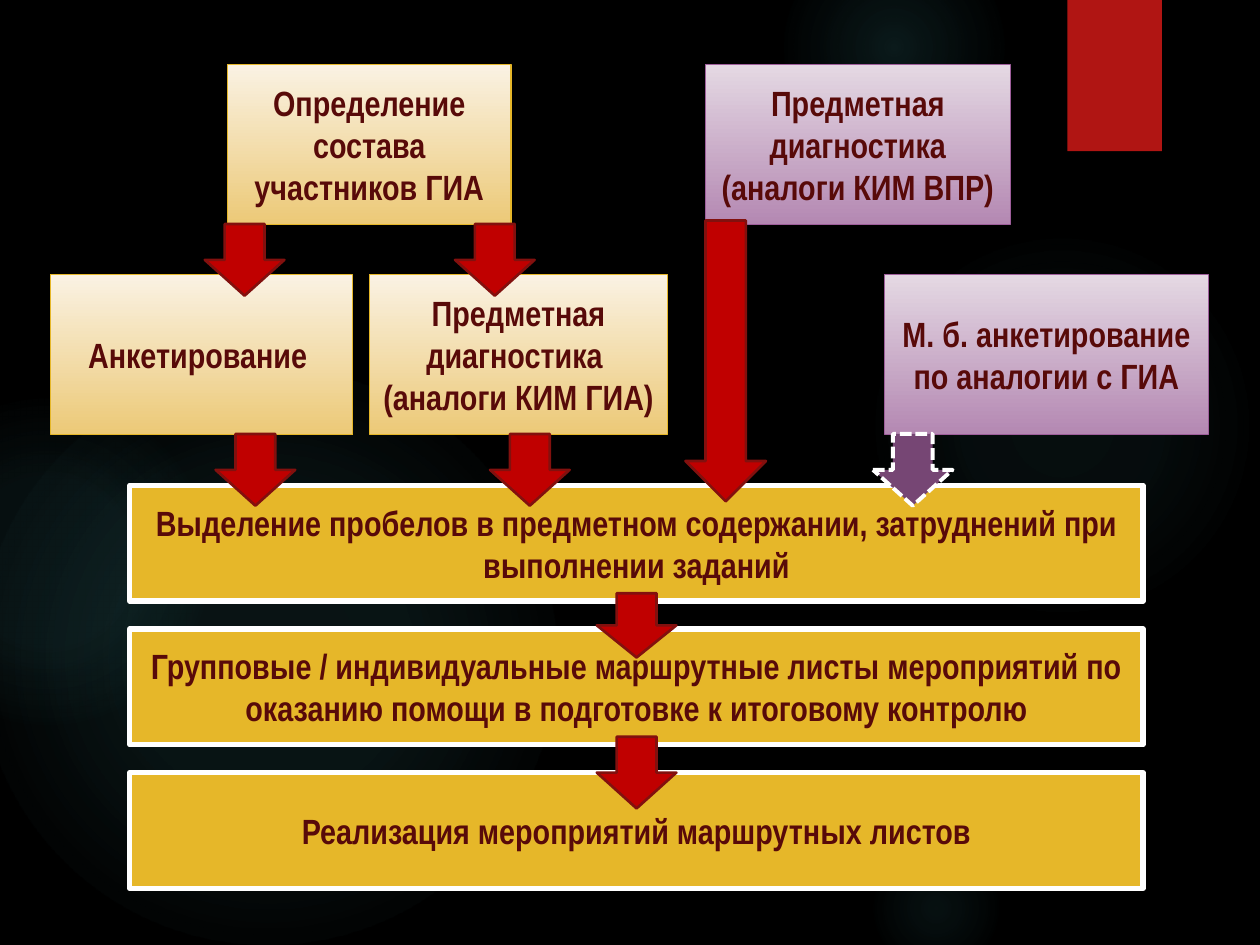
from dataclasses import dataclass

import pptx
import pptx.dml.color
import pptx.enum.dml
import pptx.enum.shapes
import pptx.enum.text
import pptx.oxml
import pptx.oxml.ns
import pptx.util

Pt = pptx.util.Pt
SHAPE = pptx.enum.shapes.MSO_SHAPE


@dataclass(frozen=True)
class Theme:
    background: str = "000000"
    glow: str = "50B9C1"
    ribbon: str = "B01513"
    text: str = "580A09"
    gold: str = "E6B729"
    gold_stops: tuple = ("FAF2E3", "ECC977")
    plum: str = "9E5E9B"
    plum_stops: tuple = ("E4D8E3", "B488B2")
    bar_line: str = "FFFFFF"
    arrow: str = "C00000"
    arrow_line: str = "82100E"
    optional_arrow: str = "764674"
    font: str = "Arial Narrow"
    size: int = 20


def rgb(color):
    return pptx.dml.color.RGBColor.from_string(color)


def set_gradient(s, stops, direction):
    """Fill s with (position %, colour, opacity %) stops; direction is lin or path XML."""
    s.fill.gradient()
    old = s.element.spPr.find(pptx.oxml.ns.qn("a:gradFill"))
    gs = "".join(
        f'<a:gs pos="{pos * 1000}"><a:srgbClr val="{color}">'
        f'<a:alpha val="{alpha * 1000}"/></a:srgbClr></a:gs>'
        for pos, color, alpha in stops)
    new = pptx.oxml.parse_xml(
        f'<a:gradFill {pptx.oxml.ns.nsdecls("a")} rotWithShape="1">'
        f'<a:gsLst>{gs}</a:gsLst>{direction}</a:gradFill>')
    old.getparent().replace(old, new)


class Deck:
    LINEAR = '<a:lin ang="5400000" scaled="0"/>'
    RADIAL = ('<a:path path="circle"><a:fillToRect l="50000" t="50000" '
              'r="50000" b="50000"/></a:path>')

    def __init__(self, theme):
        self.theme = theme
        self.prs = pptx.Presentation()
        self.prs.slide_width, self.prs.slide_height = Pt(720), Pt(540)
        self.slide = self.prs.slides.add_slide(self.prs.slide_layouts[6])
        fill = self.slide.background.fill
        fill.solid()
        fill.fore_color.rgb = rgb(theme.background)

    def shape(self, kind, box, fill=None, line=None, width=0):
        s = self.slide.shapes.add_shape(kind, *(Pt(v) for v in box))
        s.shadow.inherit = False
        if fill:
            s.fill.solid()
            s.fill.fore_color.rgb = rgb(fill)
        if line:
            s.line.color.rgb = rgb(line)
            s.line.width = Pt(width)
        else:
            s.line.fill.background()
        return s

    def glow(self, left, top, size, stops):
        s = self.shape(SHAPE.OVAL, (left, top, size, size))
        set_gradient(s, [(pos, self.theme.glow, alpha) for pos, alpha in stops], self.RADIAL)

    def label(self, s, paragraphs):
        tf = s.text_frame
        tf.word_wrap = True
        tf.vertical_anchor = pptx.enum.text.MSO_ANCHOR.MIDDLE
        for i, text in enumerate(paragraphs):
            p = tf.add_paragraph() if i else tf.paragraphs[0]
            p.alignment = pptx.enum.text.PP_ALIGN.CENTER
            r = p.add_run()
            r.text = text
            r.font.name = self.theme.font
            r.font.size = Pt(self.theme.size)
            r.font.bold = True
            r.font.color.rgb = rgb(self.theme.text)

    def card(self, box, stops, line, *paragraphs):
        s = self.shape(SHAPE.RECTANGLE, box, line=line, width=0.75)
        set_gradient(s, [(0, stops[0], 100), (100, stops[1], 100)], self.LINEAR)
        self.label(s, paragraphs)

    def bar(self, box, text):
        s = self.shape(SHAPE.RECTANGLE, box, self.theme.gold, self.theme.bar_line, 3)
        self.label(s, [text])

    def arrow(self, left, top, height=41, width=45.5):
        self.shape(SHAPE.DOWN_ARROW, (left, top, width, height),
                   self.theme.arrow, self.theme.arrow_line, 1.5)

    def optional_arrow(self, left, top):
        s = self.shape(SHAPE.DOWN_ARROW, (left, top, 45.5, 41),
                       self.theme.optional_arrow, self.theme.bar_line, 2.25)
        s.line.dash_style = pptx.enum.dml.MSO_LINE.SQUARE_DOT


def main():
    theme = Theme()
    deck = Deck(theme)

    for left, top, size, stops in (
            (496, 132, 222, ((0, 7), (36, 6), (69, 0))),
            (448, -36, 126, ((0, 14), (36, 7), (73, 0))),
            (496, 480, 78, ((0, 9), (36, 5), (66, 0))),
            (-12, 210, 330, ((0, 11), (36, 10), (75, 0))),
            (-66, 228, 186, ((0, 8), (36, 8), (72, 0)))):
        deck.glow(left, top, size, stops)
    deck.shape(SHAPE.RECTANGLE, (610, 0, 54, 86.4), theme.ribbon)

    upper, lower, card_height = 37, 157, 91.5
    gold = (theme.gold_stops, theme.gold)
    plum = (theme.plum_stops, theme.plum)
    for left, top, width, style, paragraphs in (
            (130, upper, 162, gold, ["Определение состава участников ГИА"]),
            (29, lower, 172.5, gold, ["Анкетирование "]),
            (211.3, lower, 170, gold, ["Предметная диагностика ", "(аналоги КИМ ГИА)"]),
            (403, upper, 174.4, plum, ["Предметная диагностика (аналоги КИМ ВПР)"]),
            (505.5, lower, 185, plum, ["М. б. анкетирование по аналогии с ГИА"])):
        deck.card((left, top, width, card_height), *style, *paragraphs)

    bar_top, bar_step = 277.3, 82.1
    for i, text in enumerate((
            "Выделение пробелов в предметном содержании, затруднений при выполнении заданий",
            "Групповые / индивидуальные маршрутные листы мероприятий по оказанию помощи "
            "в подготовке к итоговому контролю",
            "Реализация мероприятий маршрутных листов")):
        deck.bar((74.2, bar_top + i * bar_step, 579, 66.2), text)

    under_upper, under_lower = upper + card_height - 0.5, lower + card_height - 0.5
    for left, top in ((117, under_upper), (260, under_upper),
                      (123.2, under_lower), (280, under_lower), (341, 421)):
        deck.arrow(left, top)
    deck.arrow(341, 339, height=36.7)
    deck.arrow(391.7, 126, height=160.5, width=46)
    deck.optional_arrow(498.8, under_lower)

    deck.prs.save("out.pptx")


if __name__ == "__main__":
    main()
